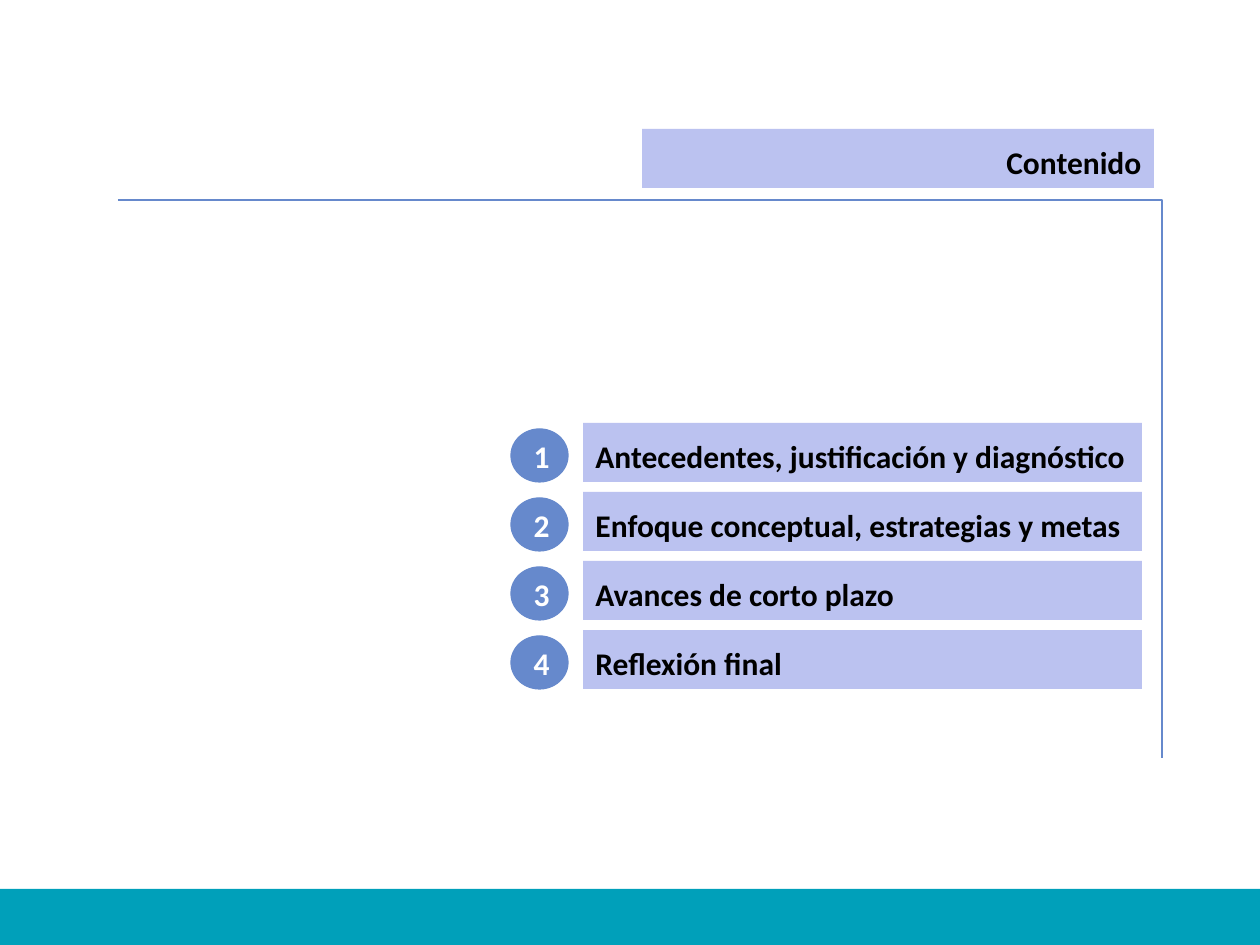
import pptx
import pptx.dml.color
import pptx.enum.shapes
import pptx.enum.text
import pptx.oxml.ns
import pptx.util
from lxml import etree

RGBColor = pptx.dml.color.RGBColor
MSO_SHAPE = pptx.enum.shapes.MSO_SHAPE
PP_ALIGN = pptx.enum.text.PP_ALIGN
MSO_ANCHOR = pptx.enum.text.MSO_ANCHOR

TEAL = RGBColor(0x00, 0xA0, 0xBA)
BLUE = RGBColor(0x66, 0x89, 0xCC)
VIOLET = RGBColor(0x57, 0x67, 0xDB)
BLACK = RGBColor(0, 0, 0)
WHITE = RGBColor(0xFF, 0xFF, 0xFF)

EMU_PER_PX = 914400 / 126
TOPICS = [
    "Antecedentes, justificación y diagnóstico",
    "Enfoque conceptual, estrategias y metas",
    "Avances de corto plazo",
    "Reflexión final",
]


def px(n):
    return pptx.util.Emu(round(n * EMU_PER_PX))


def add_shape(slide, kind, x, y, w, h, color):
    sp = slide.shapes.add_shape(kind, px(x), px(y), px(w), px(h))
    sp.shadow.inherit = False
    sp.fill.solid()
    sp.fill.fore_color.rgb = color
    sp.line.fill.background()
    return sp


def fill_violet(sp):
    """Fill with violet at 40% opacity."""
    sp.fill.solid()
    sp.fill.fore_color.rgb = VIOLET
    clr = sp.fill._xPr.find(".//" + pptx.oxml.ns.qn("a:srgbClr"))
    etree.SubElement(clr, pptx.oxml.ns.qn("a:alpha"), val="40000")


def set_text(sp, text, color, align, spacing=1.0):
    tf = sp.text_frame
    tf.text = text
    tf.word_wrap = True
    tf.auto_size = pptx.enum.text.MSO_AUTO_SIZE.NONE
    tf.vertical_anchor = MSO_ANCHOR.MIDDLE
    p = tf.paragraphs[0]
    p.alignment = align
    p.line_spacing = spacing
    p.font.name = "Calibri"
    p.font.size = pptx.util.Pt(18)
    p.font.bold = True
    p.font.color.rgb = color
    return tf


def add_title(slide, x, y, w, h):
    title = slide.shapes.title
    title.left, title.top, title.width, title.height = map(px, (x, y, w, h))
    fill_violet(title)
    set_text(title, "Contenido", BLACK, PP_ALIGN.RIGHT, 1.2)


def add_frame(slide, x, y, w, h):
    fb = slide.shapes.build_freeform(px(x), px(y))
    fb.add_line_segments([(px(x + w), px(y)), (px(x + w), px(y + h))], close=False)
    sp = fb.convert_to_shape()
    sp.shadow.inherit = False
    sp.fill.background()
    sp.line.color.rgb = BLUE
    sp.line.width = pptx.util.Pt(1)


def add_topic(slide, number, topic, x, y, w, h):
    # Text bar
    bar = add_shape(slide, MSO_SHAPE.RECTANGLE, x + 72, y, w - 72, h, VIOLET)
    fill_violet(bar)
    tf = set_text(bar, topic, BLACK, PP_ALIGN.LEFT, 1.2)
    tf.margin_right = 0
    # Numbered disc
    disc = add_shape(slide, MSO_SHAPE.OVAL, x, y + 6, 57, 53, BLUE)
    disc.line.color.rgb = BLUE
    disc.line.width = pptx.util.Pt(0.75)
    tf = set_text(disc, str(number), WHITE, PP_ALIGN.CENTER)
    tf.margin_left = px(4)
    tf.margin_right = tf.margin_top = tf.margin_bottom = 0


def add_agenda(slide, x, y, w, row_h, pitch):
    for i, topic in enumerate(TOPICS):
        add_topic(slide, i + 1, topic, x, y + i * pitch, w, row_h)


def main():
    prs = pptx.Presentation()
    prs.slide_width, prs.slide_height = px(1260), px(945)
    slide = prs.slides.add_slide(prs.slide_layouts[5])

    # Footer band
    add_shape(slide, MSO_SHAPE.RECTANGLE, 0, 889, 1260, 56, TEAL)
    add_frame(slide, 118, 200, 1044, 558)
    add_title(slide, 642, 129, 512, 59)
    add_agenda(slide, 511, 423, 631, 59, 69)

    prs.save("out.pptx")


if __name__ == "__main__":
    main()
